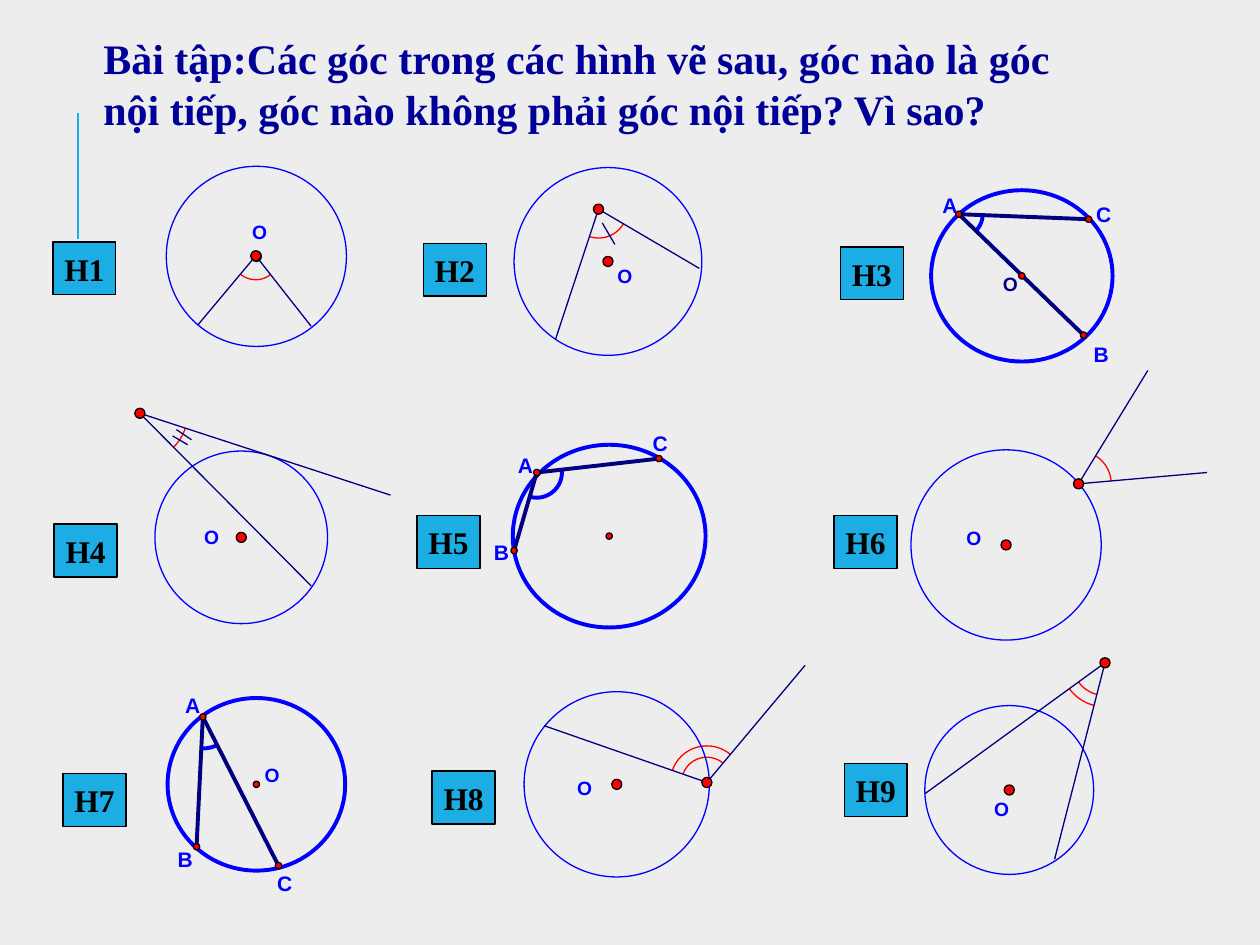
from math import atan2, cos, pi, sin

from lxml.etree import SubElement
from pptx import Presentation
from pptx.dml.color import RGBColor
from pptx.enum.shapes import MSO_CONNECTOR, MSO_SHAPE
from pptx.enum.text import MSO_ANCHOR, MSO_AUTO_SIZE, PP_ALIGN
from pptx.oxml.ns import qn
from pptx.util import Inches, Pt

BLUE, NAVY, RED, BLACK = "0000FF", "000080", "FF0000", "000000"
ACCENT, TITLE_COLOUR, BACKGROUND = "1CADE4", "000099", "EDEDED"
SERIF, SANS = "Times New Roman", "Arial"
TAG_SIZE = (0.5, 0.42)
ARC_STEPS = 16

TITLE = ["Bài tập:Các góc trong các hình vẽ sau, góc nào là góc",
         "nội tiếp, góc nào không phải góc nội tiếp? Vì sao?"]

# Inches. circle: left, top, width, height; rays run from vertex to each end;
# arcs: radii of the angle marks; labels: left, top of each letter.
FIGURES = {
    "H1": dict(tag=(0.42, 1.92), circle=(1.32, 1.32, 1.43, 1.43), vertex=(2.03, 2.03),
               ends=[(1.57, 2.58), (2.47, 2.59)], arcs=[0.19], labels={"O": (2, 1.75)}),
    "H2": dict(tag=(3.36, 1.93), circle=(4.08, 1.33, 1.49, 1.49), vertex=(4.75, 1.66),
               ends=[(5.55, 2.13), (4.41, 2.69)], arcs=[0.23], labels={"O": (4.9, 2.1)},
               ticks=[((4.78, 1.77), (4.88, 1.94))]),
    "H3": dict(tag=(6.67, 1.96), circle=(7.39, 1.51, 1.44, 1.36), vertex=(7.61, 1.7),
               ends=[(8.6, 2.66), (8.64, 1.74)], arcs=[0.19], bold=True, centre_colour=NAVY,
               labels={"O": (7.96, 2.16), "A": (7.48, 1.53), "B": (8.68, 2.71), "C": (8.7, 1.6)}),
    "H4": dict(tag=(0.43, 4.16), circle=(1.23, 3.58, 1.37, 1.37), vertex=(1.11, 3.28),
               ends=[(2.47, 4.65), (3.1, 3.93)], arcs=[0.38], labels={"O": (1.62, 4.17)},
               ticks=[((1.37, 3.46), (1.49, 3.53)), ((1.4, 3.41), (1.52, 3.49))]),
    "H5": dict(tag=(3.31, 4.09), circle=(4.07, 3.53, 1.53, 1.45), vertex=(4.26, 3.75),
               ends=[(4.08, 4.37), (5.23, 3.64)], arcs=[0.2], bold=True,
               labels={"A": (4.11, 3.59), "B": (3.92, 4.28), "C": (5.18, 3.42)}),
    "H6": dict(tag=(6.62, 4.09), circle=(7.23, 3.57, 1.51, 1.51), vertex=(8.56, 3.84),
               ends=[(9.58, 3.75), (9.11, 2.94)], arcs=[0.26], labels={"O": (7.67, 4.18)}),
    "H7": dict(tag=(0.5, 6.14), circle=(1.33, 5.54, 1.41, 1.37), vertex=(1.61, 5.69),
               ends=[(1.56, 6.72), (2.21, 6.87)], arcs=[0.25], bold=True,
               labels={"O": (2.1, 6.06), "A": (1.47, 5.5), "B": (1.41, 6.72), "C": (2.2, 6.91)}),
    "H8": dict(tag=(3.43, 6.12), circle=(4.16, 5.49, 1.47, 1.47), vertex=(5.61, 6.21),
               ends=[(6.39, 5.28), (4.32, 5.76)], arcs=[0.29, 0.2], labels={"O": (4.58, 6.16)}),
    "H9": dict(tag=(6.7, 6.06), circle=(7.34, 5.6, 1.34, 1.34), vertex=(8.77, 5.26),
               ends=[(7.34, 6.3), (8.37, 6.82)], arcs=[0.35, 0.26], labels={"O": (7.89, 6.33)}),
}


def rgb(colour):
    return RGBColor.from_string(colour)


def inches(*lengths):
    return [Inches(length) for length in lengths]


def style(shape, line, width, fill=None):
    shape.shadow.inherit = False
    shape.line.color.rgb = rgb(line)
    shape.line.width = Pt(width)
    if fill:
        shape.fill.solid()
        shape.fill.fore_color.rgb = rgb(fill)
    else:
        shape.fill.background()


def write(frame, lines, font, size, colour, align=PP_ALIGN.LEFT, margin=0.0, **frame_format):
    for side in ("left", "top", "right", "bottom"):
        setattr(frame, f"margin_{side}", Inches(margin))
    for name, value in frame_format.items():
        setattr(frame, name, value)
    for index, line in enumerate(lines):
        paragraph = frame.add_paragraph() if index else frame.paragraphs[0]
        paragraph.alignment = align
        run = paragraph.add_run()
        run.text = line
        for name, value in dict(name=font, size=Pt(size), bold=True).items():
            setattr(run.font, name, value)
        run.font.color.rgb = rgb(colour)


def add_segment(shapes, start, end, colour, width):
    segment = shapes.add_connector(MSO_CONNECTOR.STRAIGHT, *inches(*start, *end))
    segment.line.color.rgb = rgb(colour)
    segment.line.width = Pt(width)
    SubElement(segment._element.spPr, qn("a:effectLst"))


def add_dot(shapes, centre, width, height):
    x, y = centre
    dot = shapes.add_shape(MSO_SHAPE.OVAL, *inches(x - width / 2, y - height / 2, width, height))
    style(dot, BLACK, 0, RED)


def add_angle_mark(shapes, vertex, ends, radius, colour, width):
    """Arc across the angle; the last move stretches its frame to the vertex."""
    x, y = vertex
    first, second = (atan2(end_y - y, end_x - x) for end_x, end_y in ends)
    sweep = (second - first + pi) % (2 * pi) - pi
    angles = [first + sweep * step / ARC_STEPS for step in range(ARC_STEPS + 1)]
    points = [inches(x + radius * cos(a), y + radius * sin(a)) for a in angles]
    outline = shapes.build_freeform(*points[0], scale=1.0)
    outline.add_line_segments(points[1:], close=False)
    outline.move_to(*inches(x, y))
    style(outline.convert_to_shape(), colour, width)


def draw_figure(shapes, tag, circle, vertex, ends, arcs, labels,
                ticks=(), bold=False, centre_colour=BLUE):
    width = 2.25 if bold else 0.75
    for radius in arcs:
        add_angle_mark(shapes, vertex, ends, radius, BLUE if bold else RED, width)
    style(shapes.add_shape(MSO_SHAPE.OVAL, *inches(*circle)), BLUE, width)
    for start, end in [(vertex, end) for end in ends] + list(ticks):
        add_segment(shapes, start, end, NAVY, width)

    left, top, across, down = circle
    centre = (left + across / 2, top + down / 2)
    for point in [centre, vertex] + (ends if bold else []):
        add_dot(shapes, point, *((0.05, 0.05) if bold else (0.08, 0.08)))
    for letter, corner in labels.items():
        is_centre = letter == "O"
        label = shapes.add_textbox(*inches(*corner, 0.12, 0.18 if is_centre else 0.2))
        write(label.text_frame, [letter], SANS, 11 if is_centre else 12,
              centre_colour if is_centre else BLUE, word_wrap=False)


def add_tag(shapes, name, corner):
    tag = shapes.add_shape(MSO_SHAPE.RECTANGLE, *inches(*corner, *TAG_SIZE))
    style(tag, BLACK, 0.75, ACCENT)
    write(tag.text_frame, [name], SERIF, 18, BLACK, PP_ALIGN.CENTER,
          word_wrap=False, vertical_anchor=MSO_ANCHOR.MIDDLE)


def main():
    deck = Presentation()
    deck.slide_width, deck.slide_height = inches(10, 7.5)
    slide = deck.slides.add_slide(deck.slide_layouts[5])
    slide.background.fill.solid()
    slide.background.fill.fore_color.rgb = rgb(BACKGROUND)

    title = slide.shapes.title
    title.left, title.top, title.width, title.height = inches(0.72, 0.2, 7.92, 0.92)
    write(title.text_frame, TITLE, SERIF, 24, TITLE_COLOUR, margin=0.1, word_wrap=True,
          auto_size=MSO_AUTO_SIZE.NONE, vertical_anchor=MSO_ANCHOR.MIDDLE)
    add_segment(slide.shapes, (0.62, 1.9), (0.62, 0.9), ACCENT, 1.5)

    for name, figure in FIGURES.items():
        draw_figure(slide.shapes.add_group_shape().shapes, **figure)
        add_tag(slide.shapes, name, figure["tag"])
    deck.save("out.pptx")


if __name__ == "__main__":
    main()
